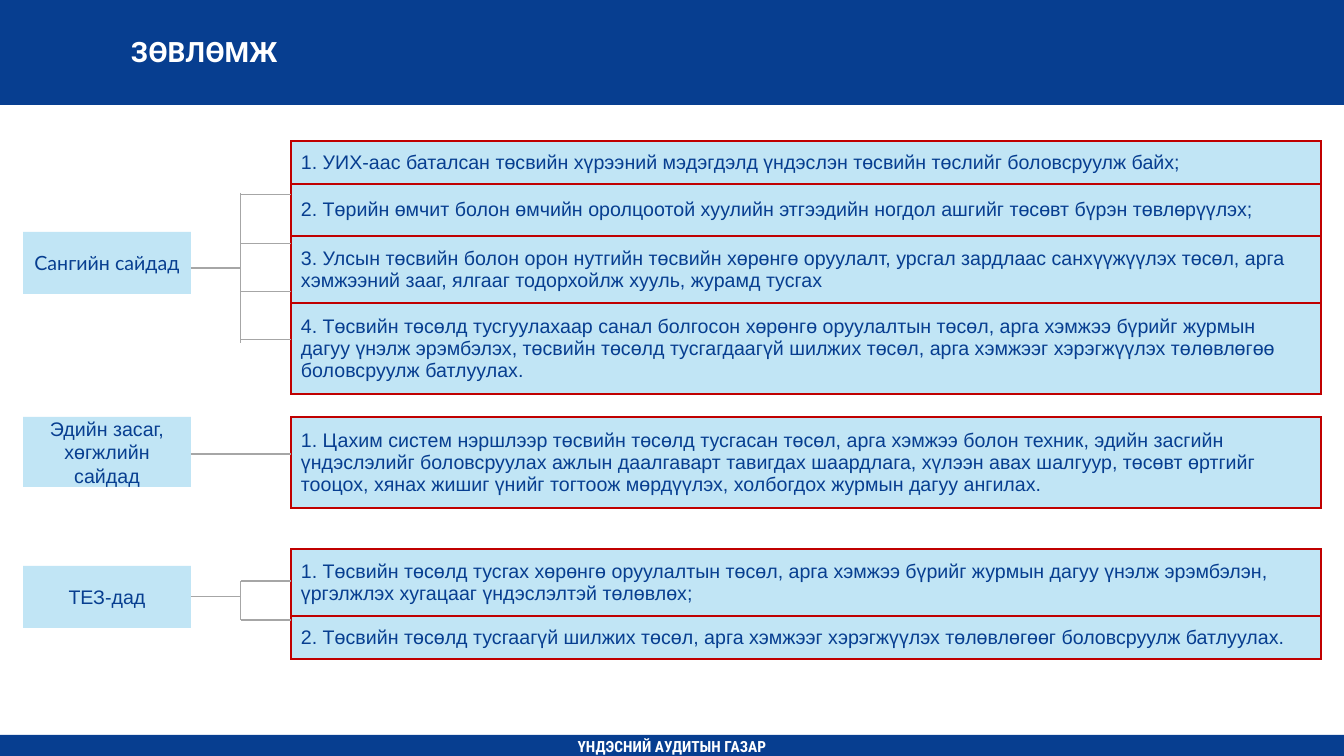
from pptx import Presentation
from pptx import util as u
from pptx.dml.color import RGBColor
from pptx.enum import shapes, text
from pptx.oxml import parse_xml
from pptx.oxml.ns import nsdecls

PX = 914400 / 100.8
NAVY = RGBColor(0x07, 0x3E, 0x90)
SKY = RGBColor(0xC1, 0xE5, 0xF5)
RED = RGBColor(0xC0, 0x00, 0x00)
GREY = RGBColor(0xA6, 0xA6, 0xA6)
WHITE = RGBColor(0xFF, 0xFF, 0xFF)

LABEL_X, LABEL_W = 23, 168
BUS_X = 241
TABLE_X, TABLE_W = 291, 1030
INSET = 10

GROUPS = [
    dict(label="Сангийн сайдад", font="Lato", label_y=232, label_h=62,
         stem_y=268, bus=(193, 343), branches=(195, 244, 292, 340),
         table_y=141, rows=[
             (43, "1. УИХ-аас баталсан төсвийн хүрээний мэдэгдэлд үндэслэн төсвийн төслийг боловсруулж байх;"),
             (52, "2. Төрийн өмчит болон өмчийн оролцоотой хуулийн этгээдийн ногдол ашгийг төсөвт бүрэн төвлөрүүлэх;"),
             (67, "3. Улсын төсвийн болон орон нутгийн төсвийн хөрөнгө оруулалт, урсгал зардлаас санхүүжүүлэх төсөл, "
                  "арга хэмжээний зааг, ялгааг тодорхойлж хууль, журамд тусгах"),
             (91, "4. Төсвийн төсөлд тусгуулахаар санал болгосон хөрөнгө оруулалтын төсөл, арга хэмжээ бүрийг журмын "
                  "дагуу үнэлж эрэмбэлэх, төсвийн төсөлд тусгагдаагүй шилжих төсөл, арга хэмжээг хэрэгжүүлэх "
                  "төлөвлөгөө боловсруулж батлуулах."),
         ]),
    dict(label="Эдийн засаг, хөгжлийн сайдад", font="Arial", label_y=417, label_h=70,
         stem_y=454, bus=None, branches=(454,),
         table_y=417, rows=[
             (91, "1. Цахим систем нэршлээр төсвийн төсөлд тусгасан төсөл, арга хэмжээ болон техник, эдийн засгийн "
                  "үндэслэлийг боловсруулах ажлын даалгаварт тавигдах шаардлага, хүлээн авах шалгуур, төсөвт өртгийг "
                  "тооцох, хянах жишиг үнийг тогтоож мөрдүүлэх, холбогдох журмын дагуу ангилах."),
         ]),
    dict(label="ТЕЗ-дад", font="Arial", label_y=566, label_h=62,
         stem_y=597, bus=(581, 620), branches=(581, 620),
         table_y=549, rows=[
             (67, "1. Төсвийн төсөлд тусгах хөрөнгө оруулалтын төсөл, арга хэмжээ бүрийг журмын дагуу үнэлж эрэмбэлэн, "
                  "үргэлжлэх хугацааг үндэслэлтэй төлөвлөх;"),
             (43, "2. Төсвийн төсөлд тусгаагүй шилжих төсөл, арга хэмжээг хэрэгжүүлэх төлөвлөгөөг боловсруулж батлуулах."),
         ]),
]


def px(*lengths):
    """Turn px lengths into a list of EMU."""
    return [u.Emu(round(n * PX)) for n in lengths]


def write(tf, words, font, size, color, align, bold=False):
    """Put one formatted paragraph in a text frame."""
    tf.word_wrap = True
    tf.vertical_anchor = text.MSO_ANCHOR.MIDDLE
    p = tf.paragraphs[0]
    p.text = words
    p.alignment = align
    p.font.name, p.font.size, p.font.bold = font, u.Pt(size), bold
    p.font.color.rgb = color


def set_insets(holder, x, y):
    """Set equal side insets and equal top and bottom insets."""
    holder.margin_left, holder.margin_right, holder.margin_top, holder.margin_bottom = px(x, x, y, y)


def add_block(s, box, color):
    """Add a plain filled rectangle."""
    sp = s.shapes.add_shape(shapes.MSO_SHAPE.RECTANGLE, *px(*box))
    sp.shadow.inherit = False
    sp.fill.solid()
    sp.fill.fore_color.rgb = color
    sp.line.fill.background()
    return sp


def add_line(s, x1, y1, x2, y2):
    """Add a thin grey connector."""
    c = s.shapes.add_connector(shapes.MSO_CONNECTOR.STRAIGHT, *px(x1, y1, x2, y2))
    c.line.color.rgb = GREY
    c.line.width = u.Pt(0.75)
    c.element.spPr.append(parse_xml(f"<a:effectLst {nsdecls('a')}/>"))


def add_header(s, box):
    """Add the top band with the slide title on it."""
    x, y, w, h = box
    title = s.shapes.title
    title.element.addprevious(add_block(s, box, NAVY).element)
    title.left, title.top, title.width, title.height = px(x + 121, y + 29, 925, 45)
    set_insets(title.text_frame, INSET, 5)
    title.text_frame.auto_size = text.MSO_AUTO_SIZE.NONE
    write(title.text_frame, "ЗӨВЛӨМЖ", "Roboto", 20, WHITE, text.PP_ALIGN.LEFT, True)


def add_footer(s, box):
    """Add the bottom band with the office name."""
    tf = add_block(s, box, NAVY).text_frame
    set_insets(tf, INSET, 0)
    write(tf, "ҮНДЭСНИЙ АУДИТЫН ГАЗАР", "Roboto Condensed", 11, WHITE, text.PP_ALIGN.CENTER, True)


def add_label(s, box, words, font):
    """Add the box that names an addressee."""
    tf = add_block(s, box, SKY).text_frame
    set_insets(tf, INSET, INSET)
    write(tf, words, font, 14, NAVY, text.PP_ALIGN.CENTER)


def format_cell(cell, words):
    """Fill, border and write one table cell."""
    set_insets(cell, INSET, INSET)
    write(cell.text_frame, words, "Arial", 14, NAVY, text.PP_ALIGN.LEFT)
    cell.vertical_anchor = text.MSO_ANCHOR.MIDDLE
    tcPr = cell._tc.get_or_add_tcPr()
    for side in ("lnL", "lnR", "lnT", "lnB"):
        tcPr.append(parse_xml(
            f'<a:{side} {nsdecls("a")} w="12700"><a:solidFill>'
            f'<a:srgbClr val="{RED}"/></a:solidFill></a:{side}>'))
    cell.fill.solid()
    cell.fill.fore_color.rgb = SKY


def add_advice(s, x, y, w, rows):
    """Add a one-column table of recommendations."""
    height = sum(h for h, _ in rows)
    table = s.shapes.add_table(len(rows), 1, *px(x, y, w, height)).table
    table.first_row = table.horz_banding = False
    for i, (h, words) in enumerate(rows):
        table.rows[i].height = px(h)[0]
        format_cell(table.cell(i, 0), words)


def add_group(s, group):
    """Add an addressee, its recommendations and the lines between them."""
    add_label(s, (LABEL_X, group["label_y"], LABEL_W, group["label_h"]), group["label"], group["font"])
    add_advice(s, TABLE_X, group["table_y"], TABLE_W, group["rows"])
    add_line(s, LABEL_X + LABEL_W, group["stem_y"], BUS_X, group["stem_y"])
    if group["bus"]:
        top, bottom = group["bus"]
        add_line(s, BUS_X, top, BUS_X, bottom)
    for y in group["branches"]:
        add_line(s, BUS_X, y, TABLE_X, y)


def main():
    """Build and save the slide."""
    prs = Presentation()
    prs.slide_width, prs.slide_height = px(1344, 756)
    s = prs.slides.add_slide(prs.slide_layouts[5])
    add_header(s, (0, 0, 1344, 105))
    add_footer(s, (0, 735, 1344, 23))
    for group in GROUPS:
        add_group(s, group)
    prs.save("out.pptx")


if __name__ == "__main__":
    main()
